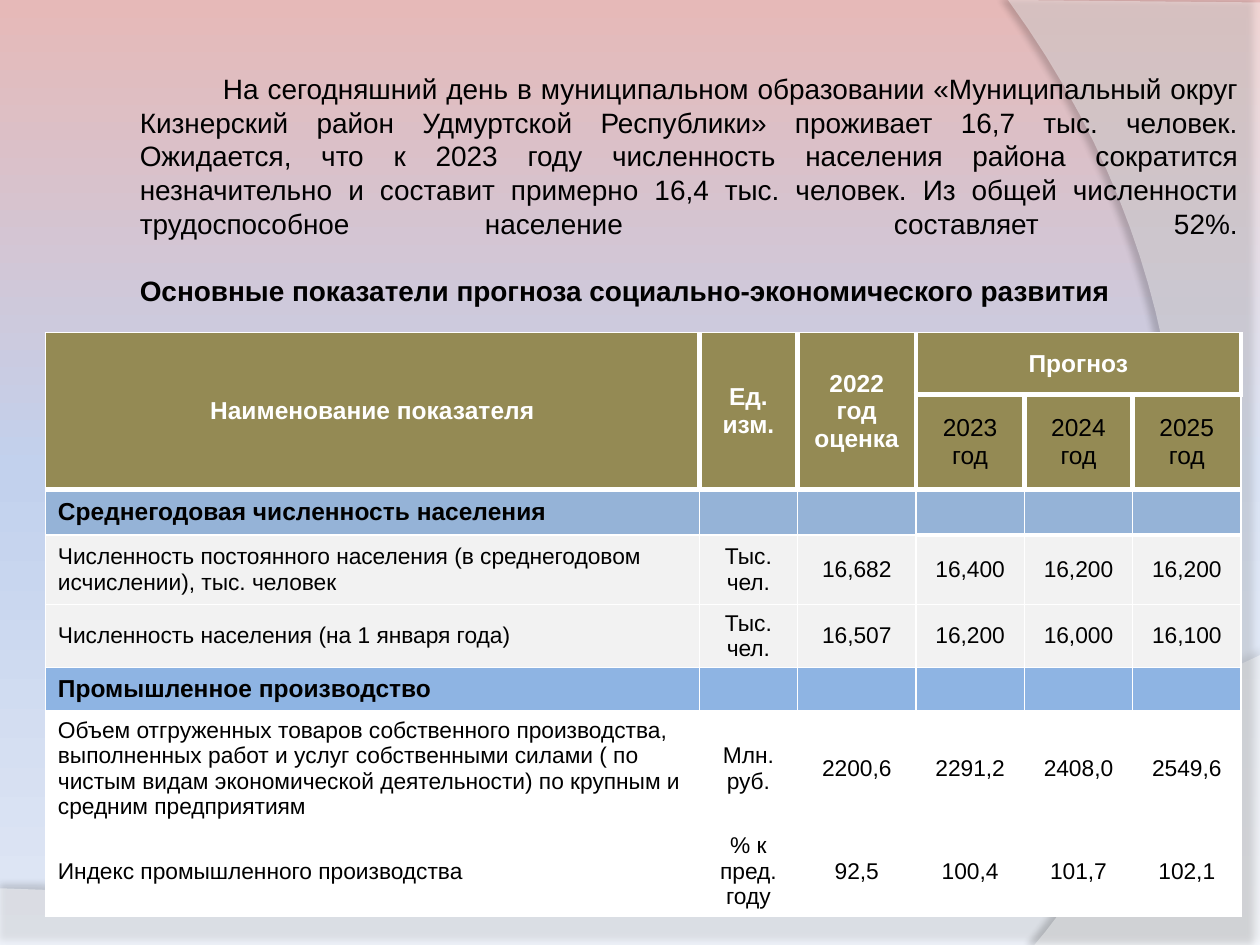
from copy import deepcopy

from lxml.etree import SubElement as Sub
from pptx import Presentation
from pptx.dml.color import RGBColor
from pptx.enum.text import MSO_ANCHOR as Anchor, MSO_AUTO_SIZE as Fit, PP_ALIGN as Align
from pptx.oxml.ns import qn
from pptx.util import Inches, Pt

WHITE, BLACK, OLIVE = "FFFFFF", "000000", "948A54"
INTRO = (
    "На сегодняшний день в муниципальном образовании «Муниципальный округ "
    "Кизнерский район Удмуртской Республики» проживает 16,7 тыс. человек. "
    "Ожидается, что к 2023 году численность населения района сократится "
    "незначительно и составит примерно 16,4 тыс. человек. Из общей численности "
    "трудоспособное население  составляет 52%."
)
HEADING = "Основные показатели прогноза социально-экономического развития"
COLS = [5.19, 0.78, 0.94, 0.86, 0.86, 0.86]
HEAD = [
    ["Наименование показателя", "Ед. изм.", "2022 год оценка", "Прогноз", "", ""],
    ["", "", "", "2023 год", "2024 год", "2025 год"],
]
BODY = [
    (0.36, "95B3D7", ["Среднегодовая численность населения"]),
    (0.55, "F2F2F2", ["Численность постоянного населения (в среднегодовом исчислении), тыс. человек",
                      "Тыс.\nчел.", "16,682", "16,400", "16,200", "16,200"]),
    (0.5, "F2F2F2", ["Численность населения (на 1 января года)",
                     "Тыс.\nчел.", "16,507", "16,200", "16,000", "16,100"]),
    (0.34, "8EB4E3", ["Промышленное производство"]),
    (0.92, WHITE, ["Объем отгруженных товаров собственного производства, выполненных работ "
                   "и услуг собственными силами ( по чистым видам экономической деятельности) "
                   "по крупным и средним предприятиям",
                   "Млн.\nруб.", "2200,6", "2291,2", "2408,0", "2549,6"]),
    (0.71, WHITE, ["Индекс промышленного производства",
                   "% к пред.\nгоду", "92,5", "100,4", "101,7", "102,1"]),
]


def paint(obj, tint):
    obj.solid()
    obj.fore_color.rgb = RGBColor.from_string(tint)


def add_run(para, text, size, tint=BLACK, bold=False):
    run = para.add_run()
    run.text = text
    font = run.font
    font.name, font.size, font.bold = "Arial", Pt(size), bold
    paint(font.fill, tint)


def set_back(slide):
    fill = slide.background.fill
    fill.gradient()
    fill.gradient_angle = 270
    stops = fill._fill._gradFill.find(qn("a:gsLst"))
    stops.append(deepcopy(stops[-1]))
    for stop, place, tint in zip(fill.gradient_stops, (0, 0.5, 1), ("E6B9B8", "C2D1ED", "E1E8F5")):
        stop.position = place
        stop.color.rgb = RGBColor.from_string(tint)


def curve(ends, count=40):
    for step in range(1, count + 1):
        t = step / count
        parts = ((1 - t) ** 3, 3 * t * (1 - t) ** 2, 3 * t * t * (1 - t), t ** 3)
        yield tuple(sum(w * p[axis] for w, p in zip(parts, ends)) for axis in (0, 1))


def add_wave(slide, box, lines, ends, alpha, shade):
    left, top = box
    dots = [(Inches(left + x), Inches(top + y)) for x, y in [*lines, *curve([lines[-1], *ends])]]
    path = slide.shapes.build_freeform(*dots[0], scale=1.0)
    path.add_line_segments(dots[1:], close=True)
    wave = path.convert_to_shape()
    paint(wave.fill, WHITE)
    wave.line.fill.background()
    props = wave._element.spPr
    tone = props.find(qn("a:solidFill"))[0]
    Sub(tone, qn("a:alpha"), val=str(alpha * 1000))
    dark, blur, dist, turn = shade
    glow = Sub(Sub(props, qn("a:effectLst")), qn("a:outerShdw"), blurRad=str(Pt(blur)),
               dist=str(Pt(dist)), dir=str(turn * 60000), algn="ctr", rotWithShape="0")
    Sub(Sub(glow, qn("a:srgbClr"), val=BLACK), qn("a:alpha"), val=str(dark * 1000))


def set_title(slide, box):
    title = slide.shapes.title
    title.left, title.top, title.width, title.height = map(Inches, box)
    slide.shapes._spTree.append(title._element)
    frame = title.text_frame
    frame.word_wrap, frame.auto_size = True, Fit.NONE
    frame.vertical_anchor = Anchor.TOP
    frame.margin_left = frame.margin_right = frame.margin_bottom = Inches(0.05)
    frame.margin_top = Inches(0.36)
    intro, head = frame.paragraphs[0], frame.add_paragraph()
    intro.alignment, head.alignment = Align.JUSTIFY, Align.LEFT
    intro._p.get_or_add_pPr().set("indent", str(Inches(0.66)))
    add_run(intro, INTRO, 16)
    intro.add_line_break()
    for node, name in ((intro._p[-1], "a:rPr"), (intro._p, "a:endParaRPr")):
        Sub(Sub(node, qn(name), sz="1600"), qn("a:latin"), typeface="Arial")
    add_run(head, HEADING, 16, bold=True)


def set_edges(cell, wide):
    props = cell._tc.get_or_add_tcPr()
    for spot, side in enumerate("LRTB"):
        line = Sub(props, qn(f"a:ln{side}"), w=str(Pt(3 if side in wide else 1)))
        Sub(Sub(line, qn("a:solidFill")), qn("a:srgbClr"), val=WHITE)
        props.remove(line)
        props.insert(spot, line)


def set_cell(cell, text, fill, wide, size, tint, bold, align):
    paint(cell.fill, fill)
    set_edges(cell, wide)
    cell.vertical_anchor = Anchor.MIDDLE
    if not text:
        cell.margin_top = cell.margin_bottom = 0
        return
    frame = cell.text_frame
    for spot, line in enumerate(text.split("\n")):
        para = frame.add_paragraph() if spot else frame.paragraphs[0]
        para.alignment = align
        add_run(para, line, size, tint, bold)


def add_grid(slide, box):
    tall = [0.49, 0.75] + [row[0] for row in BODY]
    grid = slide.shapes.add_table(len(tall), len(COLS), *map(Inches, (*box, sum(COLS), sum(tall)))).table
    for col, wide in zip(grid.columns, COLS):
        col.width = Inches(wide)
    for row, high in zip(grid.rows, tall):
        row.height = Inches(high)
    for r, texts in enumerate(HEAD):
        for c, text in enumerate(texts):
            wide = ("L" if c else "") + ("R" if c < 5 or r == 0 else "") + ("T" if r else "") + "B"
            set_cell(grid.cell(r, c), text, OLIVE, wide, 14,
                     BLACK if r else WHITE, r == 0, Align.CENTER)
    for c in range(3):
        grid.cell(0, c).merge(grid.cell(1, c))
    grid.cell(0, 3).merge(grid.cell(0, 5))
    for r, (_, fill, texts) in enumerate(BODY, 2):
        band = len(texts) == 1
        for c in range(len(COLS)):
            wide = "" if r > 2 else "TB" if c > 2 else "T"
            set_cell(grid.cell(r, c), texts[c] if c < len(texts) else "", fill, wide,
                     14 if band else 13, BLACK, band, Align.CENTER if c else Align.LEFT)


def main():
    deck = Presentation()
    deck.slide_width, deck.slide_height = Inches(10), Inches(7.5)
    slide = deck.slides.add_slide(deck.slide_layouts[5])
    set_back(slide)
    add_wave(slide, (0, 5.2), [(0, 1.85), (0, 2.3), (10, 2.3), (10, 0)],
             [(5.59, 2.09), (3.91, 1.99), (0, 1.85)], 45, (35, 4, 3.5, 270))
    add_wave(slide, (8, 0), [(2, 0.02), (2, 7.5), (0.21, 7.5)],
             [(1.35, 6.19), (2.18, 3), (0, 0)], 40, (45, 4, 4, 180))
    set_title(slide, (1.06, 0.21, 8.82, 2.36))
    add_grid(slide, (0.36, 2.64))
    deck.save("out.pptx")


if __name__ == "__main__":
    main()
